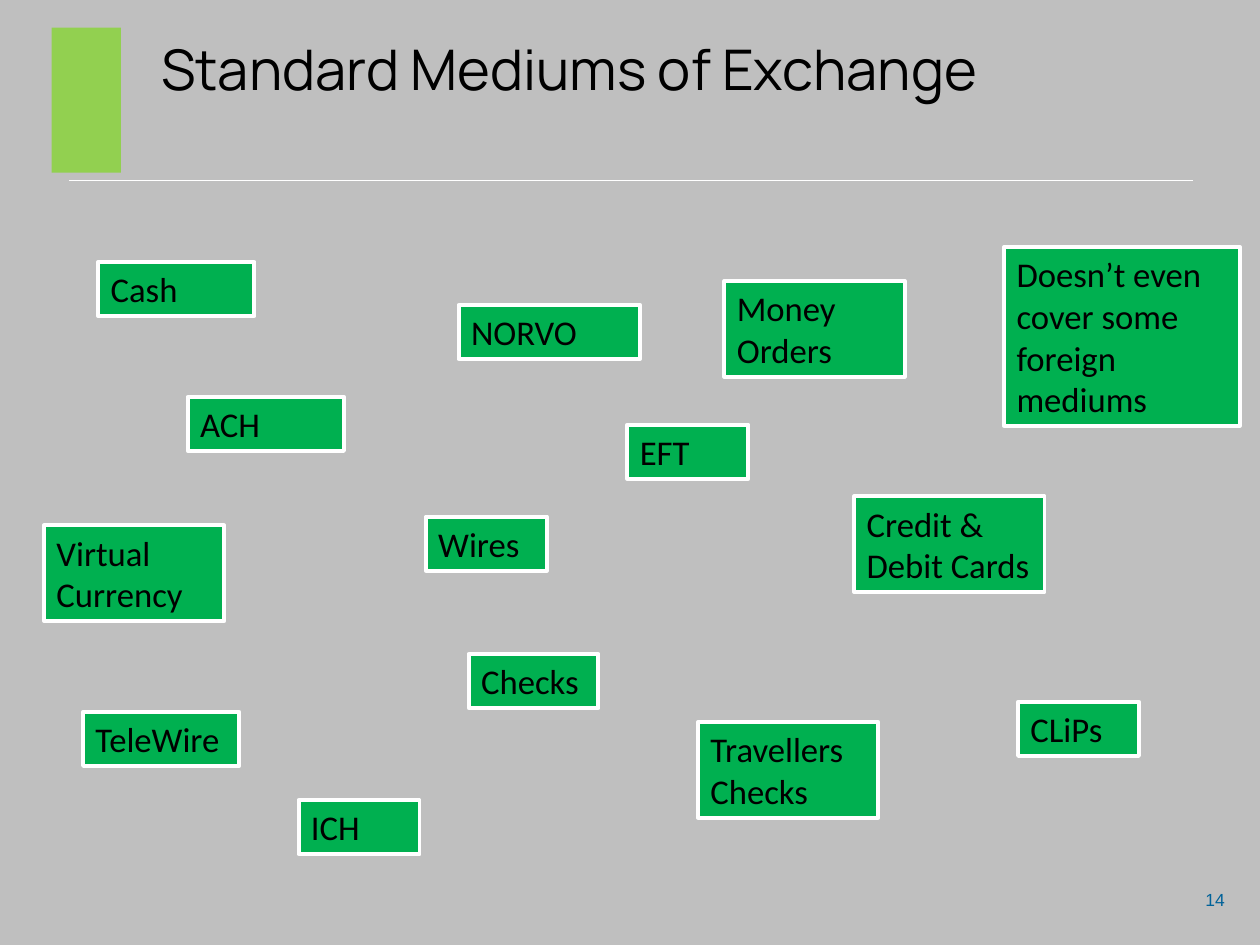
from dataclasses import dataclass

from lxml import etree
from pptx import Presentation
from pptx.dml.color import RGBColor
from pptx.enum.shapes import MSO_CONNECTOR, MSO_SHAPE
from pptx.enum.text import MSO_ANCHOR, PP_ALIGN
from pptx.oxml.ns import qn
from pptx.util import Inches, Pt

RECTANGLE = MSO_SHAPE.RECTANGLE
STRAIGHT = MSO_CONNECTOR.STRAIGHT
TOP = MSO_ANCHOR.TOP
LEFT, RIGHT = PP_ALIGN.LEFT, PP_ALIGN.RIGHT


@dataclass(frozen=True)
class Theme:
    background: RGBColor = RGBColor(0xBF, 0xBF, 0xBF)
    white: RGBColor = RGBColor(0xFF, 0xFF, 0xFF)
    text: RGBColor = RGBColor(0x00, 0x00, 0x00)
    card: RGBColor = RGBColor(0x00, 0xB0, 0x50)
    emblem: RGBColor = RGBColor(0x92, 0xD0, 0x50)
    page_number: RGBColor = RGBColor(0x00, 0x62, 0x99)
    title_font: str = "Manrope"
    card_font: str = "Calibri"
    number_font: str = "Arial"
    title_size: float = 32
    card_size: float = 19.8
    number_size: float = 10


THEME = Theme()

# text, left, top, width, number of text lines
MEDIUMS = [
    ("Cash", 0.78, 2.08, 1.24, 1),
    ("Wires", 3.38, 4.1, 0.96, 1),
    ("ACH", 1.49, 3.15, 1.24, 1),
    ("TeleWire", 0.66, 5.65, 1.24, 1),
    ("Virtual Currency", 0.35, 4.17, 1.43, 2),
    ("ICH", 2.37, 6.35, 0.96, 1),
    ("EFT", 4.98, 3.37, 0.96, 1),
    ("Money Orders", 5.75, 2.23, 1.43, 2),
    ("Checks", 3.72, 5.19, 1.03, 1),
    ("CLiPs", 8.08, 5.57, 0.96, 1),
    ("Travellers Checks", 5.54, 5.73, 1.43, 2),
    ("Doesn’t even cover some foreign mediums", 7.97, 1.96, 1.87, 4),
    ("Credit & Debit Cards", 6.78, 3.94, 1.51, 2),
    ("NORVO", 3.64, 2.42, 1.44, 1),
]
CARD_PADDING = 0.1
CARD_LINE_HEIGHT = 0.33


def write_text(shape, text, font, size, color, alignment=LEFT):
    frame = shape.text_frame
    frame.word_wrap = True
    frame.vertical_anchor = TOP
    frame.text = text
    paragraph = frame.paragraphs[0]
    paragraph.alignment = alignment
    paragraph.font.name = font
    paragraph.font.size = Pt(size)
    paragraph.font.color.rgb = color


def add_rectangle(slide, left, top, width, height, fill):
    shape = slide.shapes.add_shape(
        RECTANGLE, Inches(left), Inches(top), Inches(width), Inches(height))
    shape.shadow.inherit = False
    shape.fill.solid()
    shape.fill.fore_color.rgb = fill
    shape.line.fill.background()
    return shape


def add_header(slide, left, top, width, height):
    """Place the emblem, the title and the rule below them."""
    add_rectangle(slide, left, top, 0.55, height - 0.06, THEME.emblem)
    title = slide.shapes.add_textbox(
        Inches(left + 0.77), Inches(top + 0.05), Inches(8.11), Inches(1.12))
    title.text_frame.margin_top = 0
    write_text(title, "Standard Mediums of Exchange", THEME.title_font,
               THEME.title_size, THEME.text)
    bottom = Inches(top + height)
    rule = slide.shapes.add_connector(
        STRAIGHT, Inches(left + 0.14), bottom, Inches(left + width), bottom)
    rule.line.color.rgb = THEME.white
    rule.line.width = Pt(0.5)
    etree.SubElement(rule._element.spPr, qn("a:effectLst"))


def add_medium(slide, text, left, top, width, lines):
    height = CARD_PADDING + lines * CARD_LINE_HEIGHT
    card = add_rectangle(slide, left, top, width, height, THEME.card)
    card.line.color.rgb = THEME.white
    card.line.width = Pt(2.25)
    write_text(card, text, THEME.card_font, THEME.card_size, THEME.text)


def add_page_number(slide, left, top, width, height):
    box = slide.shapes.add_textbox(
        Inches(left), Inches(top), Inches(width), Inches(height))
    write_text(box, "14", THEME.number_font, THEME.number_size,
               THEME.page_number, RIGHT)
    box.text_frame.word_wrap = False


def main():
    presentation = Presentation()
    presentation.slide_width = Inches(10)
    presentation.slide_height = Inches(7.5)
    slide = presentation.slides.add_slide(presentation.slide_layouts[6])
    slide.background.fill.solid()
    slide.background.fill.fore_color.rgb = THEME.background

    add_header(slide, 0.41, 0.22, 9.06, 1.21)
    add_page_number(slide, 9.45, 7.01, 0.37, 0.27)
    for medium in MEDIUMS:
        add_medium(slide, *medium)
    presentation.save("out.pptx")


if __name__ == "__main__":
    main()
